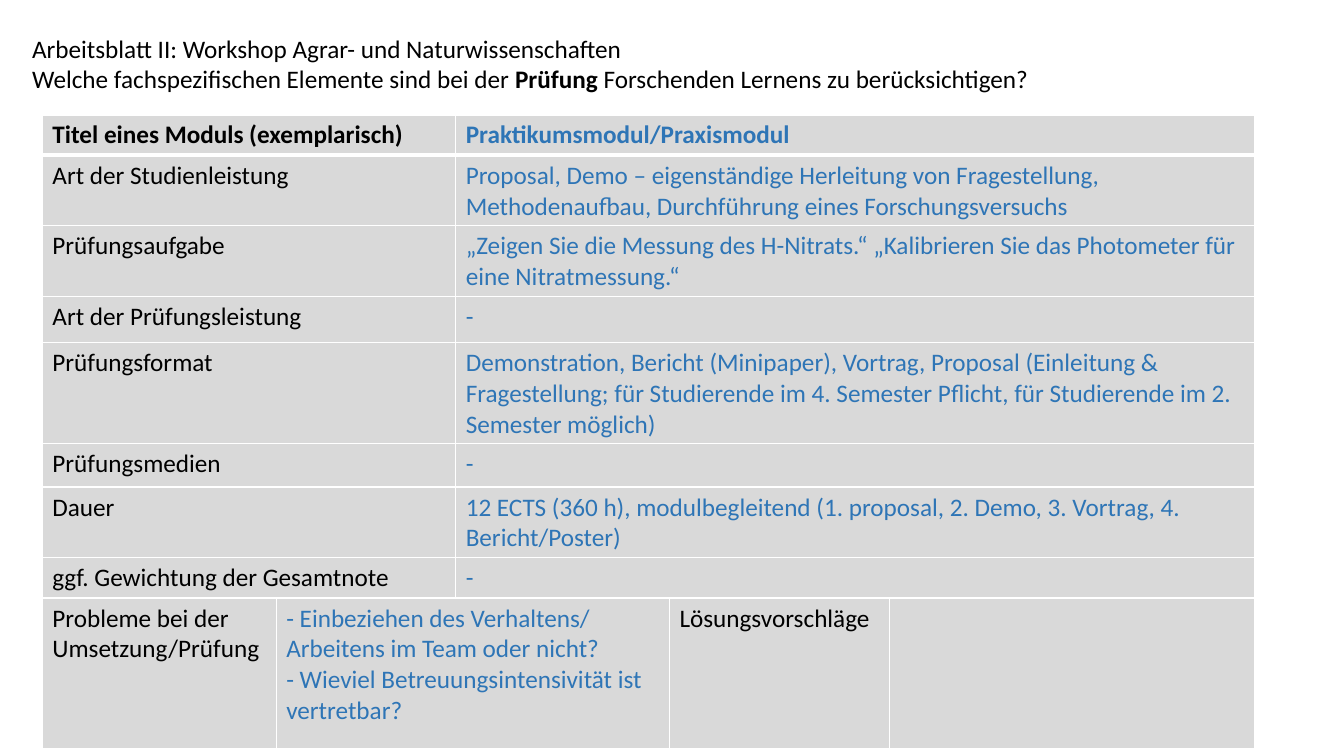
from lxml import etree
from pptx import Presentation
from pptx.dml.color import RGBColor
from pptx.oxml.ns import qn
from pptx.util import Inches, Pt

BLACK, BLUE, GRAY, WHITE = "000000", "2E75B6", "D9D9D9", "FFFFFF"

HEADING = [
    [("Arbeitsblatt II: Workshop Agrar- und Naturwissenschaften", False)],
    [("Welche fachspezifischen Elemente sind bei der ", False),
     ("Prüfung", True),
     (" Forschenden Lernens zu berücksichtigen?", False)],
]

COLUMN_WIDTHS = [2.32, 1.78, 2.12, 2.18, 3.62]
MODULE_ROWS = [
    (0.39, "Titel eines Moduls (exemplarisch)", "Praktikumsmodul/Praxismodul"),
    (0.68, "Art der Studienleistung",
     "Proposal, Demo – eigenständige Herleitung von Fragestellung, "
     "Methodenaufbau, Durchführung eines Forschungsversuchs"),
    (0.68, "Prüfungsaufgabe",
     "„Zeigen Sie die Messung des H-Nitrats.“ „Kalibrieren Sie das "
     "Photometer für eine Nitratmessung.“"),
    (0.46, "Art der Prüfungsleistung", "-"),
    (0.97, "Prüfungsformat",
     "Demonstration, Bericht (Minipaper), Vortrag, Proposal (Einleitung & "
     "Fragestellung; für Studierende im 4. Semester Pflicht, für "
     "Studierende im 2. Semester möglich)"),
    (0.43, "Prüfungsmedien", "-"),
    (0.68, "Dauer",
     "12 ECTS (360 h), modulbegleitend (1. proposal, 2. Demo, 3. Vortrag, "
     "4. Bericht/Poster)"),
    (0.39, "ggf. Gewichtung der Gesamtnote", "-"),
]
PROBLEM_HEIGHT = 1.49
PROBLEM_CELLS = [
    (0, 0, ["Probleme bei der Umsetzung/Prüfung"], BLACK),
    (1, 2, ["- Einbeziehen des Verhaltens/ Arbeitens im Team oder nicht?",
            "- Wieviel Betreuungsintensivität ist vertretbar?"], BLUE),
    (3, 3, ["Lösungsvorschläge"], BLACK),
    (4, 4, [""], BLUE),
]


def color(value):
    return RGBColor.from_string(value)


def format_font(font, value, bold=False):
    for name, setting in {"name": "Calibri", "size": Pt(18), "bold": bold}.items():
        setattr(font, name, setting)
    font.color.rgb = color(value)


def add_heading(slide, left, top, width, height):
    box = slide.shapes.add_textbox(*map(Inches, (left, top, width, height)))
    frame = box.text_frame
    frame.word_wrap = True
    for index, runs in enumerate(HEADING):
        paragraph = frame.add_paragraph() if index else frame.paragraphs[0]
        for wording, bold in runs:
            run = paragraph.add_run()
            run.text = wording
            format_font(run.font, BLACK, bold)


def add_borders(cell, row):
    """Draw white cell edges, with a heavier one below the header row."""
    properties = cell._tc.get_or_add_tcPr()
    heavy = {0: "lnB", 1: "lnT"}.get(row)
    for side in ("lnL", "lnR", "lnT", "lnB"):
        width = Pt(3 if side == heavy else 1)
        line = etree.SubElement(properties, qn(f"a:{side}"), w=str(width))
        fill = etree.SubElement(line, qn("a:solidFill"))
        etree.SubElement(fill, qn("a:srgbClr"), val=WHITE)


def fill_cells(table, row, first, last, lines, value):
    """Merge the columns from first to last and write the lines there."""
    cell = table.cell(row, first)
    if last > first:
        cell.merge(table.cell(row, last))
    cell.text = "\n".join(lines)
    for paragraph in cell.text_frame.paragraphs:
        format_font(paragraph.font, value, bold=row == 0)
        for run in paragraph.runs:
            format_font(run.font, value, bold=row == 0)


def add_module_table(slide, left, top):
    heights = [height for height, _, _ in MODULE_ROWS] + [PROBLEM_HEIGHT]
    table = slide.shapes.add_table(
        len(heights), len(COLUMN_WIDTHS), Inches(left), Inches(top),
        Inches(sum(COLUMN_WIDTHS)), Inches(sum(heights))).table
    table.horz_banding = False
    for column, width in zip(table.columns, COLUMN_WIDTHS):
        column.width = Inches(width)
    for index, height in enumerate(heights):
        table.rows[index].height = Inches(height)
        for cell in table.rows[index].cells:
            add_borders(cell, index)
            cell.fill.solid()
            cell.fill.fore_color.rgb = color(GRAY)

    for index, (_, label, answer) in enumerate(MODULE_ROWS):
        fill_cells(table, index, 0, 1, [label], BLACK)
        fill_cells(table, index, 2, 4, [answer], BLUE)
    for first, last, lines, value in PROBLEM_CELLS:
        fill_cells(table, len(MODULE_ROWS), first, last, lines, value)


def main():
    presentation = Presentation()
    presentation.slide_width = Inches(13.33)
    presentation.slide_height = Inches(7.5)
    slide = presentation.slides.add_slide(presentation.slide_layouts[6])
    add_heading(slide, 0.22, 0.28, 12.83, 0.71)
    add_module_table(slide, 0.42, 1.14)
    presentation.save("out.pptx")


if __name__ == "__main__":
    main()
